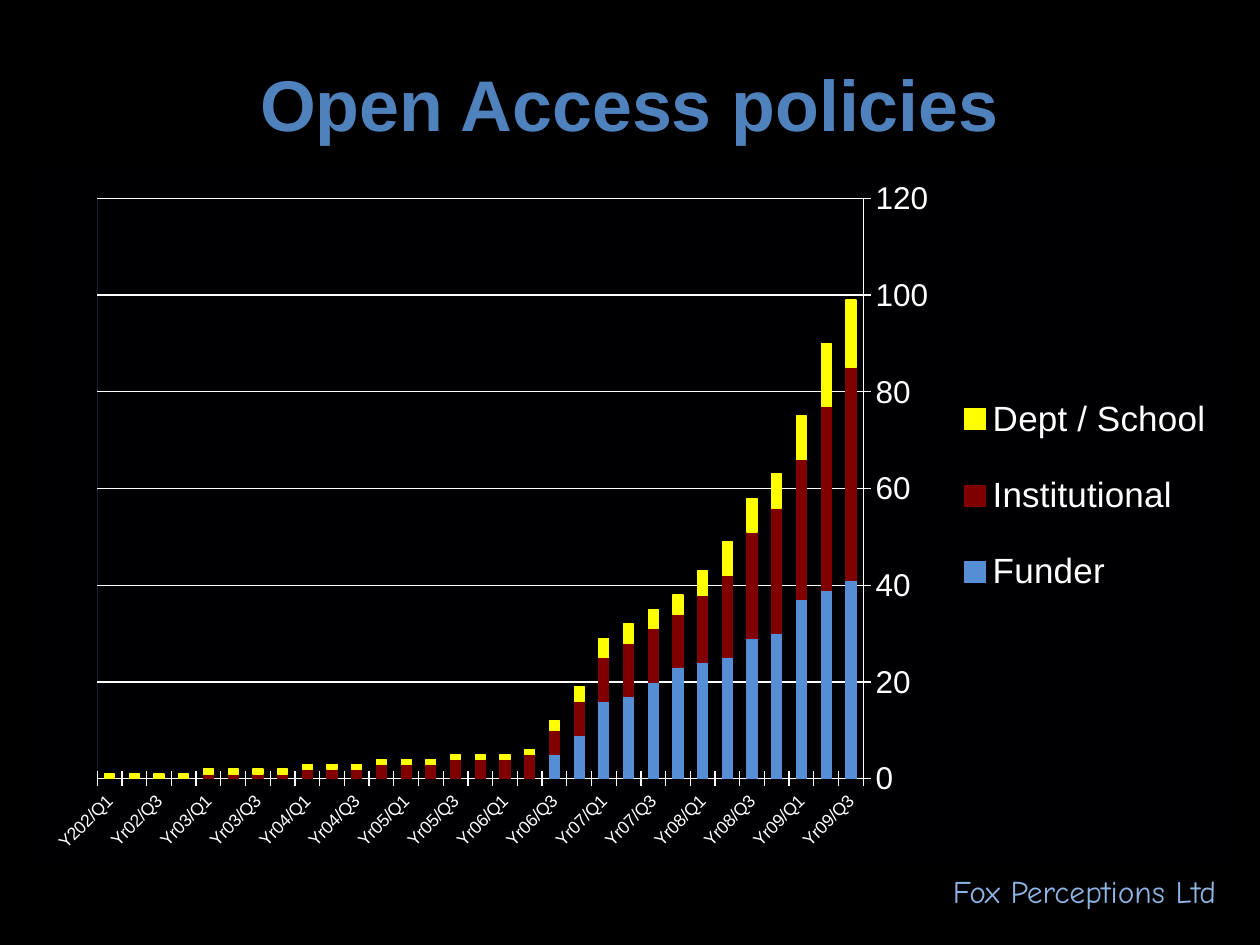
from lxml import etree
from pptx import Presentation
from pptx.chart.data import CategoryChartData
from pptx.dml.color import RGBColor
from pptx.enum.chart import XL_CHART_TYPE, XL_LEGEND_POSITION, XL_TICK_MARK
from pptx.enum.text import MSO_ANCHOR, PP_ALIGN
from pptx.oxml import parse_xml
from pptx.oxml.ns import nsdecls, qn
from pptx.util import Inches, Pt

STACKED = XL_CHART_TYPE.COLUMN_STACKED
LEGEND_RIGHT = XL_LEGEND_POSITION.RIGHT
CROSS = XL_TICK_MARK.CROSS
TOP, MIDDLE = MSO_ANCHOR.TOP, MSO_ANCHOR.MIDDLE
CENTER, RIGHT = PP_ALIGN.CENTER, PP_ALIGN.RIGHT

BLACK = RGBColor(0x00, 0x00, 0x00)
NEAR_BLACK = RGBColor(0x00, 0x00, 0x03)
NAVY = RGBColor(0x12, 0x1C, 0x38)
WHITE = RGBColor(0xFF, 0xFF, 0xFF)
TITLE_BLUE = RGBColor(0x4F, 0x81, 0xBD)
PALE_BLUE = RGBColor(0x8E, 0xB4, 0xE3)
FUNDER_BLUE = RGBColor(0x55, 0x8E, 0xD5)
MAROON = RGBColor(0x80, 0x00, 0x00)
YELLOW = RGBColor(0xFF, 0xFF, 0x00)

# Newest quarter first; the category axis is reversed to read left to right
QUARTERS = [f"Yr{year:02}/Q{quarter}" for year in range(9, 1, -1)
            for quarter in range(4, 0, -1)][1:-1] + ["Y202/Q1"]
SERIES = [
    ("Funder", FUNDER_BLUE,
     [41, 39, 37, 30, 29, 25, 24, 23, 20, 17, 16, 9, 5] + [0] * 18),
    ("Institutional", MAROON,
     [44, 38, 29, 26, 22, 17, 14, 11, 11, 11, 9, 7, 5, 5]
     + [4] * 3 + [3] * 3 + [2] * 3 + [1] * 4 + [0] * 4),
    ("Dept / School", YELLOW,
     [14, 13, 9, 7, 7, 7, 5, 4, 4, 4, 4, 3, 2] + [1] * 18),
]


def style_font(font, size, color, name="Arial", bold=False):
    font.size, font.name, font.bold = Pt(size), name, bold
    font.color.rgb = color


def style_line(line, color):
    line.color.rgb = color
    line.width = Pt(0.75)


def area_format(fill, line=None):
    """Shape properties for a chart area; no line colour means no outline."""
    paint = '<a:solidFill><a:srgbClr val="{}"/></a:solidFill>'
    outline = paint.format(line) if line else "<a:noFill/>"
    return parse_xml(f'<c:spPr {nsdecls("c", "a")}>{paint.format(fill)}'
                     f'<a:ln w="9525">{outline}</a:ln></c:spPr>')


def manual_layout(x, y, w, h, inner=False):
    """Chart layout given as shares of the chart's size."""
    target = '<c:layoutTarget val="inner"/>' if inner else ""
    return parse_xml(
        f'<c:layout {nsdecls("c")}><c:manualLayout>{target}'
        '<c:xMode val="edge"/><c:yMode val="edge"/>'
        f'<c:x val="{x}"/><c:y val="{y}"/><c:w val="{w}"/><c:h val="{h}"/>'
        '</c:manualLayout></c:layout>')


def place(part, layout, index):
    for old in part.findall(qn("c:layout")):
        part.remove(old)
    part.insert(index, layout)


class Page:
    """A dark slide on a grid of 40 columns and 30 rows."""

    def __init__(self, deck):
        self.column = deck.slide_width / 40
        self.row = deck.slide_height / 30
        self.slide = deck.slides.add_slide(deck.slide_layouts[6])
        self.slide.background.fill.solid()
        self.slide.background.fill.fore_color.rgb = BLACK

    def area(self, left, top, width, height):
        return (round(left * self.column), round(top * self.row),
                round(width * self.column), round(height * self.row))

    def text(self, content, area, align, anchor=TOP, **style):
        frame = self.slide.shapes.add_textbox(*self.area(*area)).text_frame
        frame.word_wrap = True
        frame.vertical_anchor = anchor
        para = frame.paragraphs[0]
        para.alignment = align
        span = para.add_run()
        span.text = content
        style_font(span.font, **style)

    def stacked_columns(self, categories, series, area):
        data = CategoryChartData()
        data.categories = categories
        for name, _, values in series:
            data.add_series(name, values)
        chart = self.slide.shapes.add_chart(
            STACKED, *self.area(*area), data).chart
        chart.has_title = False
        style_font(chart.font, 10, WHITE)

        # Columns
        plot = chart.plots[0]
        plot.vary_by_categories = False
        plot.overlap, plot.gap_width = 100, 150
        for column, (_, color, _) in zip(plot.series, series):
            column.format.fill.solid()
            column.format.fill.fore_color.rgb = color
            style_line(column.format.line, color)

        # Axes
        across, upward = chart.category_axis, chart.value_axis
        for axis, size in ((across, 10), (upward, 18)):
            axis.major_tick_mark = CROSS
            style_line(axis.format.line, WHITE)
            style_font(axis.tick_labels.font, size, WHITE)
        across.reverse_order = True
        upward.minimum_scale, upward.maximum_scale = 0, 120
        upward.major_unit = 20
        upward.has_major_gridlines = True
        style_line(upward.major_gridlines.format.line, WHITE)

        # Slanted labels on every second quarter
        root = chart.element
        axis_xml = root.find(".//" + qn("c:catAx"))
        axis_xml.find(".//" + qn("a:bodyPr")).set("rot", "-2700000")
        skip = etree.Element(qn("c:tickLblSkip"), val="2")
        axis_xml.find(qn("c:noMultiLvlLbl")).addprevious(skip)

        # Legend
        chart.has_legend = True
        chart.legend.position = LEGEND_RIGHT
        chart.legend.include_in_layout = False
        style_font(chart.legend.font, 20, WHITE)
        place(root.find(".//" + qn("c:legend")),
              manual_layout(0.77, 0.28, 0.22, 0.38), 1)

        # Plot position and backgrounds
        plot_area = root.find(".//" + qn("c:plotArea"))
        place(plot_area, manual_layout(0.055, 0.045, 0.64, 0.83, True), 0)
        plot_area.append(area_format(NEAR_BLACK, NAVY))
        root.find(qn("c:chart")).addnext(area_format(NEAR_BLACK))


def main():
    deck = Presentation()
    deck.slide_width, deck.slide_height = Inches(10), Inches(7.5)
    page = Page(deck)
    page.text("Open Access policies", (2, 1.2, 36, 4.1), CENTER, MIDDLE,
              size=41, color=TITLE_BLUE, bold=True)
    page.text("Fox Perceptions Ltd", (27.3, 27.5, 11.7, 1.6), RIGHT,
              size=18, color=PALE_BLUE, name="Comic Neue")
    page.stacked_columns(QUARTERS, SERIES, (1, 5.3, 38, 22.2))
    deck.save("out.pptx")


if __name__ == "__main__":
    main()
